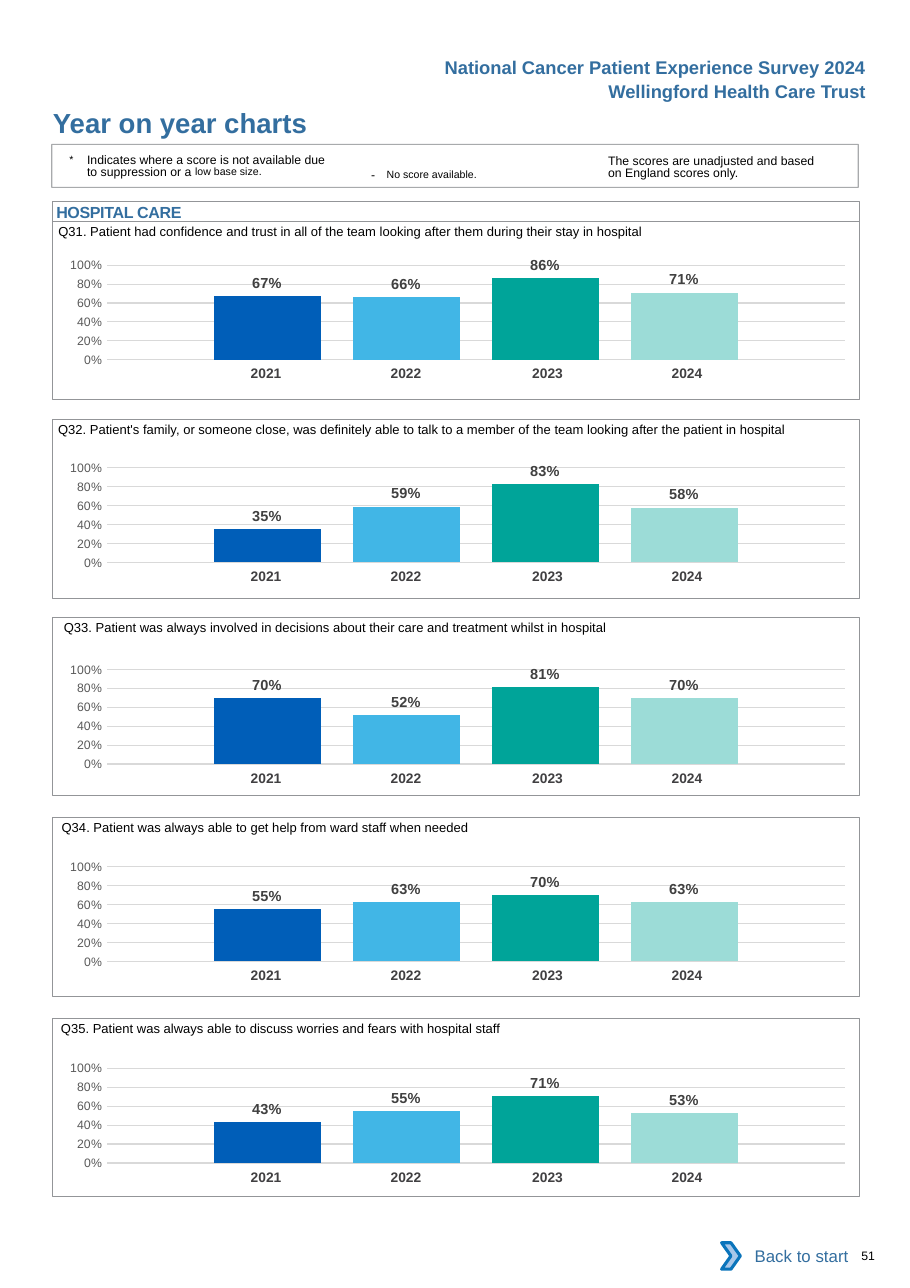
import pptx
import pptx.chart.data
import pptx.dml.color
import pptx.enum.chart
import pptx.enum.shapes
import pptx.enum.text
import pptx.oxml
import pptx.oxml.ns
import pptx.util

Pt = pptx.util.Pt
qn = pptx.oxml.ns.qn
SHAPE = pptx.enum.shapes.MSO_SHAPE
ALIGN = pptx.enum.text.PP_ALIGN
ANCHOR = pptx.enum.text.MSO_ANCHOR

WIDTH, HEIGHT = pptx.util.Inches(8.26), pptx.util.Inches(11.69)
BLUE, GREY = "336E9F", "939598"
NO_STYLE = "{2D5ABB26-0587-4C30-8999-92F81FD0307C}"
FRAME_X, FRAME_W = 5.81, 88.62

# Year, bar colour, column width (% of slide), right inset (pt)
YEARS = [
    ("2021", "005EB8", 15.38, 0),
    ("2022", "41B6E6", 15.38, 0),
    ("2023", "00A499", 16.22, 2.9),
    ("2024", "9CDCD7", 15.38, 8.6),
]

# Question, its left, frame top, chart top (% of slide), scores
QUESTIONS = [
    ("Q31. Patient had confidence and trust in all of the team looking after them "
     "during their stay in hospital", 6.42, 17.19, 18.99, (0.67, 0.66, 0.86, 0.71)),
    ("Q32. Patient's family, or someone close, was definitely able to talk to a member "
     "of the team looking after the patient in hospital",
     6.38, 32.59, 34.73, (0.35, 0.59, 0.83, 0.58)),
    ("Q33. Patient was always involved in decisions about their care and treatment "
     "whilst in hospital", 7.02, 47.9, 50.38, (0.7, 0.52, 0.81, 0.7)),
    ("Q34. Patient was always able to get help from ward staff when needed",
     6.78, 63.47, 65.7, (0.55, 0.63, 0.7, 0.63)),
    ("Q35. Patient was always able to discuss worries and fears with hospital staff",
     6.7, 79.04, 81.35, (0.43, 0.55, 0.71, 0.53)),
]


def rgb(value):
    return pptx.dml.color.RGBColor.from_string(value)


def box(x, y, w, h):
    """Turn percentages of the slide into left, top, width, height."""
    return [int(share * side / 100)
            for share, side in zip((x, y, w, h), (WIDTH, HEIGHT) * 2)]


def set_font(font, size, color="000000", bold=False, name="Arial"):
    font.size, font.name, font.bold = Pt(size), name, bold
    font.color.rgb = rgb(color)


def set_text(tf, runs, size=8, color="000000", bold=False, align=ALIGN.LEFT,
             anchor=ANCHOR.TOP, insets=(0, 0, 0, 0), leading=None, hanging=0):
    """Fill a frame; runs is a string or a list of (text, size, rPr attributes)."""
    tf.word_wrap = True
    tf.auto_size = pptx.enum.text.MSO_AUTO_SIZE.NONE
    tf.vertical_anchor = anchor
    tf.margin_left, tf.margin_top, tf.margin_right, tf.margin_bottom = map(Pt, insets)
    p = tf.paragraphs[0]
    p.alignment = align
    if leading:
        p.line_spacing = Pt(leading)
    if hanging:
        pPr = p._p.get_or_add_pPr()
        pPr.set("marL", str(Pt(hanging)))
        pPr.set("indent", str(-Pt(hanging)))
    for text, run_size, attributes in ([(runs, size, {})] if isinstance(runs, str) else runs):
        r = p.add_run()
        r.text = text
        set_font(r.font, run_size, color, bold)
        for key, value in attributes.items():
            r.font._element.set(key, value)


def add_text(s, place, runs, **fmt):
    set_text(s.shapes.add_textbox(*box(*place)).text_frame, runs, **fmt)


def add_box(s, place, kind=SHAPE.RECTANGLE, fill=None, line=None, weight=0.5):
    sp = s.shapes.add_shape(kind, *box(*place))
    sp.shadow.inherit = False
    if fill:
        sp.fill.solid()
        sp.fill.fore_color.rgb = rgb(fill)
    else:
        sp.fill.background()
    if line:
        sp.line.color.rgb = rgb(line)
        sp.line.width = Pt(weight)
    else:
        sp.line.fill.background()
    return sp


def add_scores_chart(s, place, scores):
    data = pptx.chart.data.CategoryChartData(number_format="0%")
    data.categories = ["1"]
    for number, score in enumerate(scores, 1):
        data.add_series(f"Series {number}", [score])
    chart = s.shapes.add_chart(
        pptx.enum.chart.XL_CHART_TYPE.COLUMN_CLUSTERED, *box(*place), data).chart
    chart.has_legend = chart.has_title = False
    set_font(chart.font, 10, name="Calibri")

    # Bars and their labels
    plot = chart.plots[0]
    plot.gap_width, plot.overlap, plot.vary_by_categories = 200, -30, False
    for series, (_, color, _, _) in zip(plot.series, YEARS):
        series.format.fill.solid()
        series.format.fill.fore_color.rgb = rgb(color)
    plot.has_data_labels = True
    labels = plot.data_labels
    labels.show_value = True
    labels.number_format, labels.number_format_is_linked = "0%", False
    labels.position = pptx.enum.chart.XL_LABEL_POSITION.OUTSIDE_END
    set_font(labels.font, 9.5, "404040", True)

    # Axes
    chart.category_axis.visible = False
    axis = chart.value_axis
    axis.minimum_scale, axis.maximum_scale, axis.major_unit = 0, 1, 0.2
    axis.major_tick_mark = pptx.enum.chart.XL_TICK_MARK.NONE
    axis.format.line.fill.background()
    axis.major_gridlines.format.line.color.rgb = rgb("D9D9D9")
    axis.major_gridlines.format.line.width = Pt(0.75)
    axis.tick_labels.number_format = "0%"
    axis.tick_labels.number_format_is_linked = False
    set_font(axis.tick_labels.font, 8, "595959")

    # Fixed plot area
    area = chart._chartSpace.chart.plotArea
    for old in area.findall(qn("c:layout")):
        area.remove(old)
    settings = [("layoutTarget", "inner"), ("xMode", "edge"), ("yMode", "edge"),
                ("x", 0.079), ("y", 0.145), ("w", 0.915), ("h", 0.666)]
    parts = "".join(f'<c:{tag} val="{value}"/>' for tag, value in settings)
    area.insert(0, pptx.oxml.parse_xml(
        f'<c:layout {pptx.oxml.ns.nsdecls("c")}><c:manualLayout>{parts}'
        '</c:manualLayout></c:layout>'))


def add_year_table(s, place):
    table = s.shapes.add_table(1, len(YEARS), *box(*place)).table
    table.first_row = table.horz_banding = False
    table._tbl.tblPr.find(qn("a:tableStyleId")).text = NO_STYLE
    for i, (year, _, width, inset) in enumerate(YEARS):
        table.columns[i].width = int(WIDTH * width / 100)
        cell = table.cell(0, i)
        cell.fill.background()
        cell.margin_left, cell.margin_right = Pt(7.2), Pt(inset)
        cell.margin_top = cell.margin_bottom = Pt(3.6)
        p = cell.text_frame.paragraphs[0]
        p.alignment = ALIGN.CENTER
        r = p.add_run()
        r.text = year
        set_font(r.font, 9, "414042", True)


def add_question(s, question, left, top, chart_top, scores):
    add_scores_chart(s, (4.72, chart_top, FRAME_W, 11.04), scores)
    add_year_table(s, (20.94, chart_top + 9.03, 62.35, 2.31))
    add_box(s, (FRAME_X, top, FRAME_W, 13.86), line=GREY)
    add_text(s, (left, top - 0.6, 87.3, 2.05), question, size=8.5, insets=(0, 6.5, 0, 0))


def add_legend(s):
    sp = add_box(s, (5.69, 11.21, FRAME_W, 3.34), line=GREY, weight=0.75)
    color = next(sp._element.spPr.find(qn("a:ln")).iter(qn("a:srgbClr")))
    color.append(pptx.oxml.parse_xml(
        f'<a:alpha {pptx.oxml.ns.nsdecls("a")} val="80000"/>'))
    add_text(s, (7.63, 11.8, 29.06, 2.4), [
        ("*\t", 12, {"baseline": "3000"}),
        ("Indicates where a score is not available due to suppression or a ", 8, {}),
        ("low base size.", 12, {"baseline": "7000"}),
    ], leading=8.1, hanging=11.5, insets=(0, 2.2, 0, 0))
    add_text(s, (39.59, 12.06, 22.15, 2.05), [
        ("- ", 8, {"spc": "260"}),
        ("No score available.", 12, {"baseline": "3000"}),
    ], insets=(7.2, 3.6, 7.2, 3.6))
    add_text(s, (66.83, 11.8, 24.33, 2.31),
             "The scores are unadjusted and based on England scores only.",
             leading=8.1, insets=(0, 2.2, 0, 0))


def main():
    prs = pptx.Presentation()
    prs.slide_width, prs.slide_height = WIDTH, HEIGHT
    s = prs.slides.add_slide(prs.slide_layouts[5])

    # Header and title
    for top, line in [(3.93, "National Cancer Patient Experience Survey 2024"),
                      (5.82, "Wellingford Health Care Trust")]:
        add_text(s, (42.37, top, 54, 2.57), line, size=12, color=BLUE, bold=True,
                 align=ALIGN.RIGHT, insets=(7.2, 3.6, 7.2, 3.6))
    title = s.shapes.title
    title.left, title.top, title.width, title.height = box(5.69, 8.21, 54.48, 2.57)
    set_text(title.text_frame, "Year on year charts", size=18, color=BLUE, bold=True,
             insets=(0.7, 0, 0, 0))
    add_legend(s)

    # Section heading and question panels
    heading = add_box(s, (FRAME_X, 15.65, FRAME_W, 1.54), line=GREY)
    set_text(heading.text_frame, [("HOSPITAL CARE", 10.5, {"spc": "-20"})],
             color=BLUE, bold=True, insets=(2.2, 0.7, 0, 0))
    for question in QUESTIONS:
        add_question(s, *question)

    # Footer
    back = add_box(s, (80.15, 95.72, 14.29, 3.59), fill="FFFFFF")
    set_text(back.text_frame, "Back to start", size=11, color=BLUE, align=ALIGN.RIGHT,
             anchor=ANCHOR.MIDDLE, insets=(7.2, 3.6, 7.2, 3.6))
    add_box(s, (79.3, 96.49, 2.06, 2.05), kind=SHAPE.CHEVRON, fill="A8C7E9",
            line="0A74BB", weight=2)
    add_text(s, (93.46, 96.92, 6.17, 1.11), "51", insets=(7.2, 0, 0, 0))
    prs.save("out.pptx")


if __name__ == "__main__":
    main()
